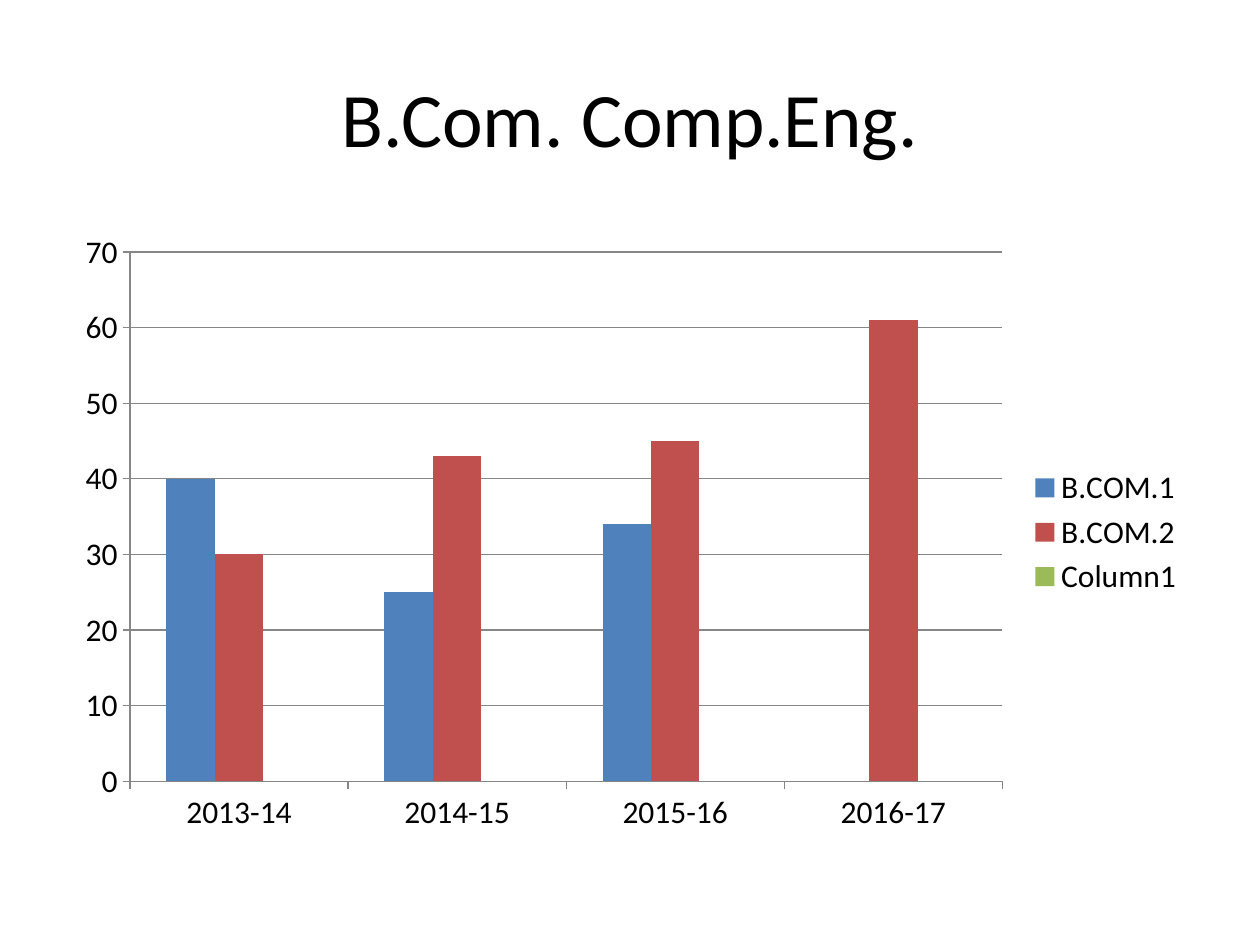
from dataclasses import dataclass

from pptx import Presentation
from pptx.chart.data import CategoryChartData
from pptx.dml.color import RGBColor
from pptx.enum.chart import XL_CHART_TYPE as ChartType
from pptx.enum.chart import XL_LEGEND_POSITION as LegendPos
from pptx.enum.chart import XL_TICK_MARK as Tick
from pptx.enum.text import MSO_ANCHOR as Anchor
from pptx.enum.text import PP_ALIGN as Align
from pptx.util import Pt


@dataclass(frozen=True)
class Theme:
    font: str = "Calibri"
    title_size: int = 44
    chart_size: int = 18
    text: str = "000000"
    rule: str = "868686"
    series: tuple = ("4F81BD", "C0504D", "9BBB59")


THEME = Theme()
LEFT, WIDTH = 36, 648
YEARS = ["2013-14", "2014-15", "2015-16", "2016-17"]
RESULTS = {
    "B.COM.1": [40, 25, 34, None],
    "B.COM.2": [30, 43, 45, 61],
    "Column1": [None] * 4,
}


def style_font(font, size):
    font.name = THEME.font
    font.size = Pt(size)
    font.color.rgb = RGBColor.from_string(THEME.text)


def style_line(line):
    line.color.rgb = RGBColor.from_string(THEME.rule)
    line.width = Pt(0.75)


def add_title(slide, text, top, height):
    sp = slide.shapes.add_textbox(Pt(LEFT), Pt(top), Pt(WIDTH), Pt(height))
    tf = sp.text_frame
    tf.word_wrap = True
    tf.vertical_anchor = Anchor.MIDDLE
    p = tf.paragraphs[0]
    p.text = text
    p.alignment = Align.CENTER
    style_font(p.font, THEME.title_size)


def add_column_chart(slide, categories, series, top, height):
    data = CategoryChartData()
    data.categories = categories
    for name, values in series.items():
        data.add_series(name, values)
    chart = slide.shapes.add_chart(
        ChartType.COLUMN_CLUSTERED,
        Pt(LEFT), Pt(top), Pt(WIDTH), Pt(height), data).chart
    style_font(chart.font, THEME.chart_size)
    chart.has_title = False

    plot = chart.plots[0]
    plot.vary_by_categories = False
    plot.gap_width = 150
    for ser, color in zip(plot.series, THEME.series):
        ser.format.fill.solid()
        ser.format.fill.fore_color.rgb = RGBColor.from_string(color)

    for axis in (chart.category_axis, chart.value_axis):
        axis.major_tick_mark = Tick.OUTSIDE
        axis.minor_tick_mark = Tick.NONE
        style_line(axis.format.line)
    axis = chart.value_axis
    axis.minimum_scale, axis.maximum_scale, axis.major_unit = 0, 70, 10
    axis.has_major_gridlines = True
    style_line(axis.major_gridlines.format.line)

    chart.has_legend = True
    chart.legend.position = LegendPos.RIGHT
    chart.legend.include_in_layout = False


def main():
    prs = Presentation()
    prs.slide_width, prs.slide_height = Pt(720), Pt(540)
    s = prs.slides.add_slide(prs.slide_layouts[6])
    add_title(s, "B.Com. Comp.Eng.", top=21.6, height=90)
    add_column_chart(s, YEARS, RESULTS, top=126, height=356.4)
    prs.save("out.pptx")


if __name__ == "__main__":
    main()
